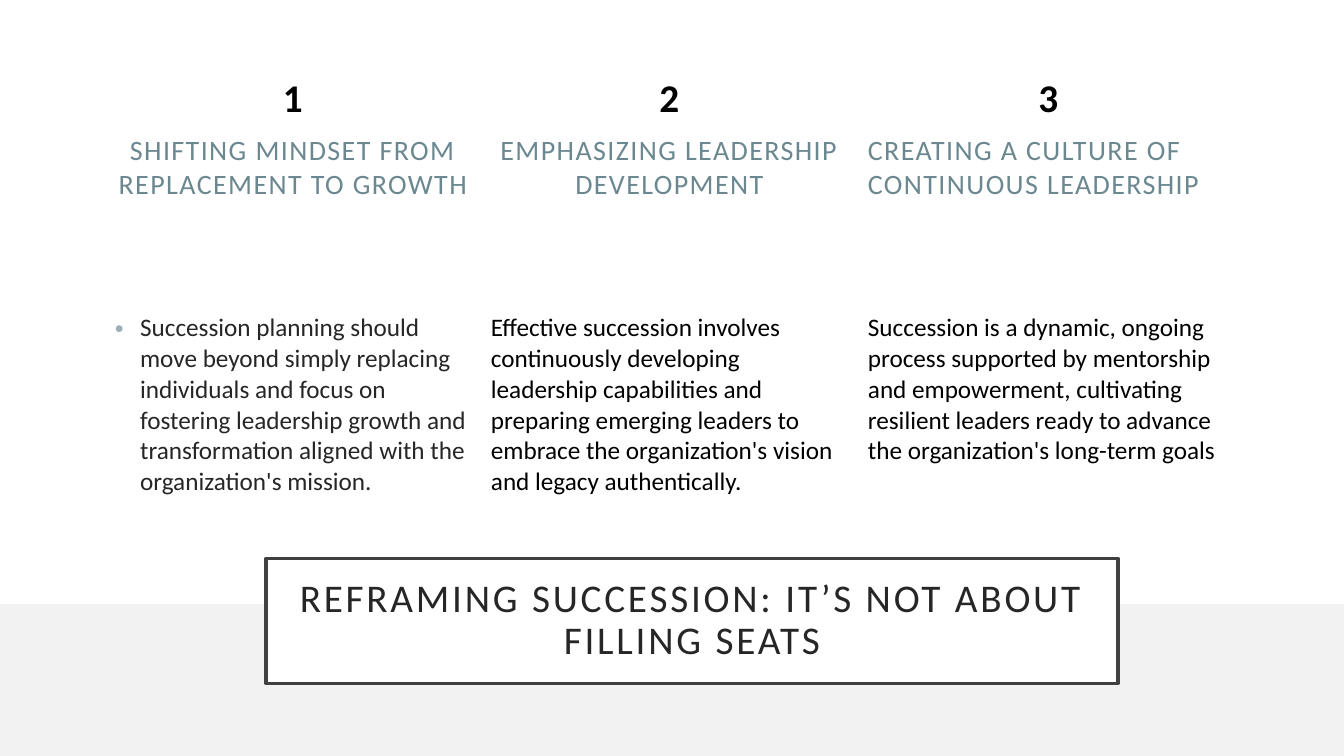
from dataclasses import dataclass

from lxml import etree
from pptx import Presentation
from pptx.dml.color import RGBColor
from pptx.enum.shapes import MSO_SHAPE
from pptx.enum.text import MSO_ANCHOR, PP_ALIGN
from pptx.oxml.ns import qn
from pptx.util import Inches, Pt

WHITE = RGBColor(0xFF, 0xFF, 0xFF)
BLACK = RGBColor(0x00, 0x00, 0x00)
INK = RGBColor(0x26, 0x26, 0x26)
FRAME = RGBColor(0x40, 0x40, 0x40)
TEAL = RGBColor(0x6B, 0x88, 0x91)
BULLET = RGBColor(0x9B, 0xAF, 0xB5)
PALE = RGBColor(0xF2, 0xF2, 0xF2)
RECTANGLE = MSO_SHAPE.RECTANGLE
MIDDLE = MSO_ANCHOR.MIDDLE
LEFT, CENTER = PP_ALIGN.LEFT, PP_ALIGN.CENTER

FONT = "Calibri"
PLAIN_TABLE = "{2D5ABB26-0587-4C30-8999-92F81FD0307C}"
SLIDE_W, SLIDE_H = Inches(13.33), Inches(7.5)

# Percent of the slide's width or height
TABLE_LEFT, TABLE_TOP = 7.8, 9.33
COLUMN_WIDTHS = (27.98, 28.05, 28.35)
ROW_HEIGHTS = (7.6, 23.73, 33.2)


@dataclass(frozen=True)
class Theme:
    heading: str
    body: str
    heading_align: PP_ALIGN = CENTER
    body_color: RGBColor = BLACK
    bulleted: bool = False


THEMES = (
    Theme("SHIFTING MINDSET FROM REPLACEMENT TO GROWTH",
          "Succession planning should move beyond simply replacing individuals "
          "and focus on fostering leadership growth and transformation aligned "
          "with the organization's mission.",
          body_color=INK, bulleted=True),
    Theme("EMPHASIZING LEADERSHIP DEVELOPMENT",
          "Effective succession involves continuously developing leadership "
          "capabilities and preparing emerging leaders to embrace the "
          "organization's vision and legacy authentically."),
    Theme("CREATING A CULTURE OF CONTINUOUS LEADERSHIP",
          "Succession is a dynamic, ongoing process supported by mentorship and "
          "empowerment, cultivating resilient leaders ready to advance the "
          "organization's long-term goals",
          heading_align=LEFT),
)


def across(share: float) -> int:
    return round(SLIDE_W * share / 100)


def down(share: float) -> int:
    return round(SLIDE_H * share / 100)


def add_bullet(p) -> None:
    props = p._p.get_or_add_pPr()
    props.set("marL", str(Inches(0.25)))
    props.set("indent", str(-Inches(0.25)))
    color = etree.SubElement(props, qn("a:buClr"))
    etree.SubElement(color, qn("a:srgbClr"), val=str(BULLET))
    etree.SubElement(props, qn("a:buFont"), typeface="Arial")
    etree.SubElement(props, qn("a:buChar"), char="•")


def write(tf, text: str, *, size: float, color: RGBColor, align=LEFT,
          bold: bool = False, tracking: float = 0, line_spacing: float = 1.0,
          bulleted: bool = False) -> None:
    """Fill the first paragraph; tracking is letter spacing in points."""
    tf.word_wrap = True
    p = tf.paragraphs[0]
    p.alignment = align
    p.line_spacing = line_spacing
    if bulleted:
        add_bullet(p)
    r = p.add_run()
    r.text = text
    r.font.name, r.font.size, r.font.bold = FONT, Pt(size), bold
    r.font.color.rgb = color
    r._r.get_or_add_rPr().set("spc", str(round(tracking * 100)))


def add_panel(s, left: float, top: float, width: float, height: float):
    sp = s.shapes.add_shape(RECTANGLE, across(left), down(top),
                            across(width), down(height))
    sp.shadow.inherit = False
    sp.fill.solid()
    sp.fill.fore_color.rgb = WHITE
    sp.line.fill.background()
    return sp


def add_title(s) -> None:
    sp = add_panel(s, 19.8, 73.87, 63.38, 16.53)
    sp.line.color.rgb = FRAME
    sp.line.width = Pt(2.5)
    tf = sp.text_frame
    tf.vertical_anchor = MIDDLE
    tf.margin_left = tf.margin_right = Inches(0.2)
    tf.margin_top = tf.margin_bottom = Inches(0.2)
    write(tf, "REFRAMING SUCCESSION: IT’S NOT ABOUT FILLING SEATS", size=28,
          color=INK, align=CENTER, tracking=2, line_spacing=0.9)


def add_themes(s) -> None:
    frame = s.shapes.add_table(
        len(ROW_HEIGHTS), len(THEMES), across(TABLE_LEFT), down(TABLE_TOP),
        across(sum(COLUMN_WIDTHS)), down(sum(ROW_HEIGHTS)))
    table = frame.table
    table.first_row = table.horz_banding = False
    table._tbl.tblPr.find(qn("a:tableStyleId")).text = PLAIN_TABLE
    for row, height in zip(table.rows, ROW_HEIGHTS):
        row.height = down(height)
    for column, width in zip(table.columns, COLUMN_WIDTHS):
        column.width = across(width)
    for cell in table.iter_cells():
        cell.fill.background()
    for i, theme in enumerate(THEMES):
        number, heading, body = (table.cell(j, i).text_frame
                                 for j in range(len(ROW_HEIGHTS)))
        write(number, str(i + 1), size=28, color=BLACK, align=CENTER, bold=True)
        write(heading, theme.heading, size=20, color=TEAL,
              align=theme.heading_align, tracking=1)
        write(body, theme.body, size=18, color=theme.body_color,
              bulleted=theme.bulleted)


def main() -> None:
    prs = Presentation()
    prs.slide_width, prs.slide_height = SLIDE_W, SLIDE_H
    s = prs.slides.add_slide(prs.slide_layouts[6])
    s.background.fill.solid()
    s.background.fill.fore_color.rgb = PALE
    add_panel(s, 0, 0, 100, 79.87)
    add_title(s)
    add_themes(s)
    prs.save("out.pptx")


if __name__ == "__main__":
    main()
